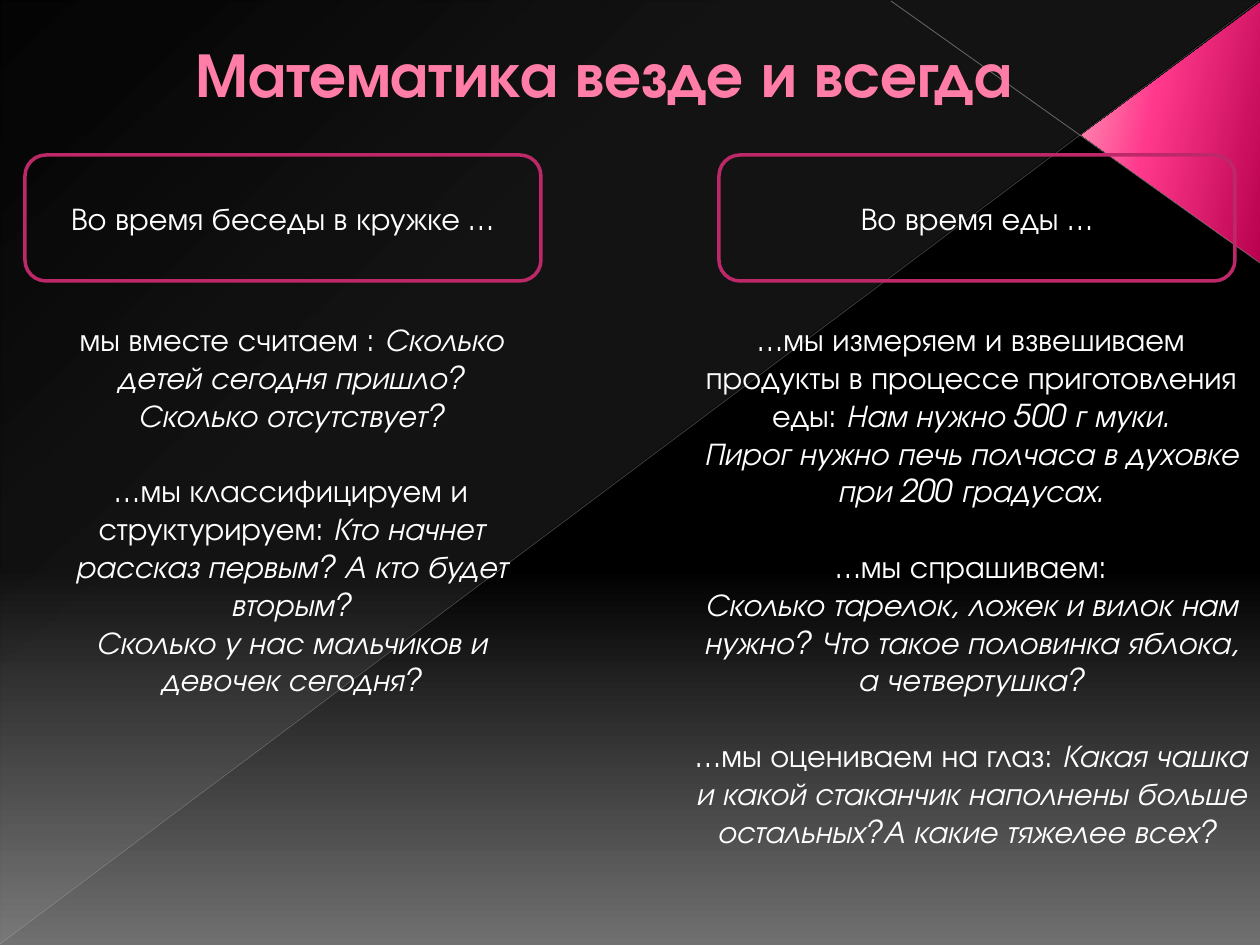
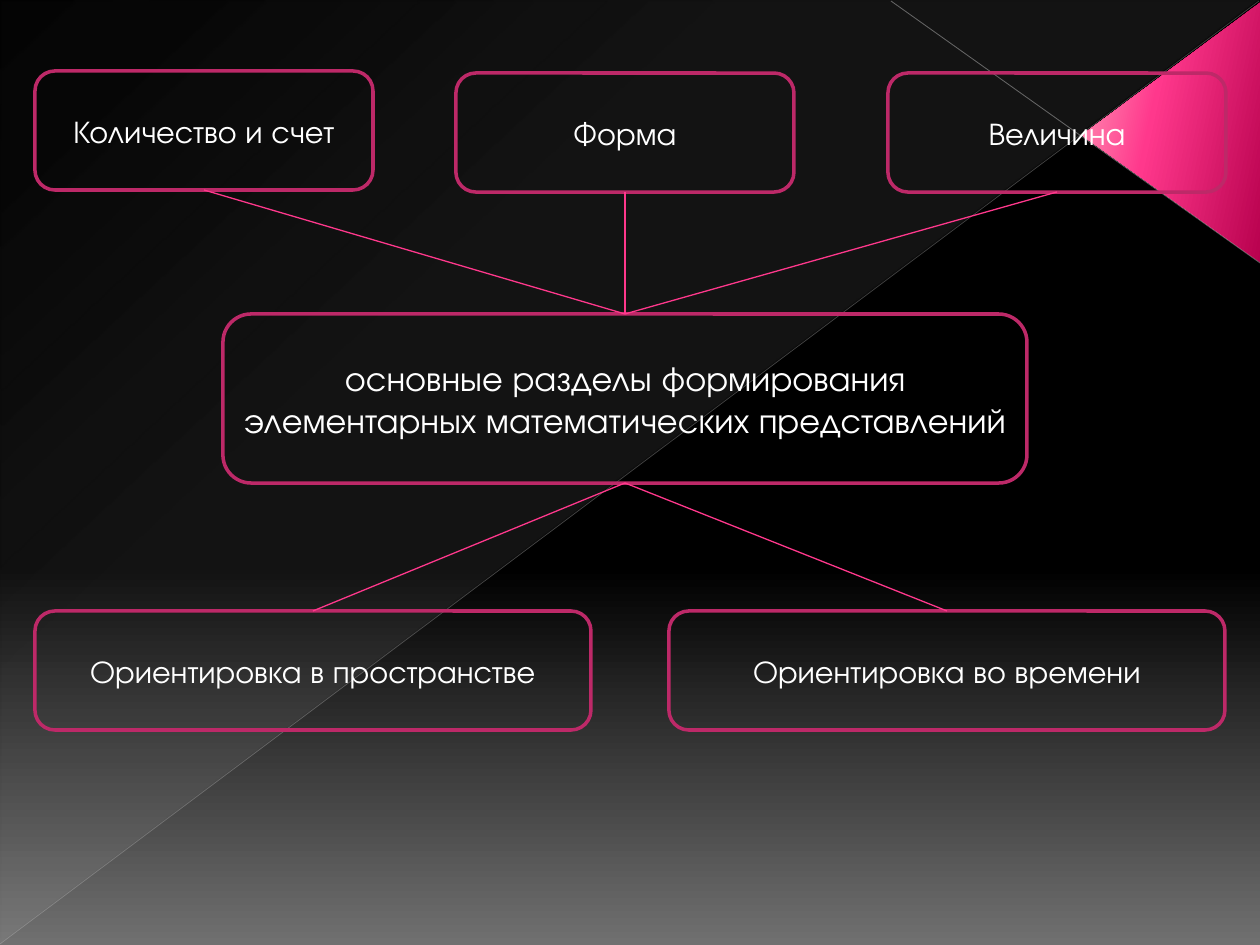
"""Build two slides on early mathematics: everyday situations and the main topics."""
from dataclasses import dataclass

from lxml import etree
from pptx import Presentation
from pptx.dml.color import RGBColor
from pptx.enum.shapes import MSO_CONNECTOR, MSO_SHAPE
from pptx.enum.text import MSO_ANCHOR, PP_ALIGN
from pptx.oxml import parse_xml
from pptx.oxml.ns import nsdecls, qn
from pptx.util import Emu, Pt

STRAIGHT = MSO_CONNECTOR.STRAIGHT
ROUNDED = MSO_SHAPE.ROUNDED_RECTANGLE
RIGHT_TRIANGLE = MSO_SHAPE.RIGHT_TRIANGLE
TRIANGLE = MSO_SHAPE.ISOSCELES_TRIANGLE
MIDDLE = MSO_ANCHOR.MIDDLE
CENTER = PP_ALIGN.CENTER

PX_PER_INCH = 126
FONT = "TeX Gyre Adventor"
COLORS = {
    "text": "FFFFFF",
    "title": "FF7DA7",
    "title_edge": "B12761",
    "frame": "BD2968",
    "link": "FF388C",
    "long_ray": "BFBFBF",
    "short_ray": "C6C6C6",
    "sheen": "D2D2D2",
    "black": "000000",
    "gray": "707070",
    "deep_pink": "B8014E",
    "pale_pink": "FF9CB9",
}
TOP, BOTTOM = 0, 2
TITLE_ONLY, BLANK = 5, 6


@dataclass(frozen=True)
class Area:
    left: int
    top: int
    width: int
    height: int


@dataclass(frozen=True)
class Stop:
    place: int
    color: str
    alpha: int = 100


@dataclass(frozen=True)
class Ray:
    start: tuple
    end: tuple
    color: str
    points: float
    alpha: int


@dataclass(frozen=True)
class Passage:
    plain: str
    spoken: str
    gap: bool = False
    breaks: bool = False


@dataclass(frozen=True)
class Situation:
    heading: str
    heading_left: int
    text_area: Area
    passages: tuple


@dataclass(frozen=True)
class Topic:
    label: str
    area: Area
    side: int


BACKDROP = (Stop(0, "black"), Stop(60, "black"), Stop(100, "gray"))
SHEEN = (Stop(0, "sheen", 10), Stop(70, "sheen", 8), Stop(100, "sheen", 1))
PINK = (Stop(0, "deep_pink"), Stop(60, "link"), Stop(100, "pale_pink"))
RAYS = (
    Ray((1260, 263), (891, 1), "short_ray", 0.47, 45),
    Ray((0, 944), (1259, 1), "long_ray", 0.39, 35),
)

SITUATIONS = (
    Situation("Во время беседы в кружке …", 25, Area(42, 314, 499, 432), (
        Passage("мы вместе считаем : ",
                "Сколько детей сегодня пришло? Сколько отсутствует?"),
        Passage("…мы классифицируем и структурируем: ",
                "Кто начнет рассказ первым? А кто будет вторым?", gap=True),
        Passage("", "Сколько у нас мальчиков и девочек сегодня?"),
    )),
    Situation("Во время еды …", 719, Area(683, 314, 577, 631), (
        Passage("…мы измеряем и взвешиваем продукты в процессе приготовления еды: ",
                "Нам нужно 500 г муки."),
        Passage("", "Пирог нужно печь полчаса в духовке при 200 градусах."),
        Passage("…мы спрашиваем:",
                "Сколько тарелок, ложек и вилок нам нужно? "
                "Что такое половинка яблока, а четвертушка?", gap=True, breaks=True),
        Passage("…мы оцениваем на глаз: ",
                "Какая чашка и какой стаканчик наполнены больше остальных?"
                "А какие тяжелее всех? ", gap=True),
    )),
)

CORE_LABEL = "основные разделы формирования элементарных математических представлений "
CORE_AREA = Area(223, 314, 804, 169)
TOPICS = (
    Topic("Количество и счет", Area(35, 71, 338, 119), TOP),
    Topic("Форма", Area(456, 73, 338, 119), TOP),
    Topic("Величина", Area(888, 73, 338, 119), TOP),
    Topic("Ориентировка в пространстве", Area(35, 611, 556, 119), BOTTOM),
    Topic("Ориентировка во времени", Area(669, 611, 556, 119), BOTTOM),
)


def px(count: int) -> Emu:
    """Turn pixels into EMU."""
    return Emu(round(count * 914400 / PX_PER_INCH))


def bounds(area: Area) -> tuple:
    """Give an area's four lengths in EMU."""
    return px(area.left), px(area.top), px(area.width), px(area.height)


def rgb(name: str) -> RGBColor:
    """Look up a named colour."""
    return RGBColor.from_string(COLORS[name])


def paint_gradient(fill, properties, stops: tuple, angle: int) -> None:
    """Fill a shape or background with a linear gradient."""
    fill.solid()
    marks = "".join(
        f'<a:gs pos="{stop.place * 1000}"><a:srgbClr val="{COLORS[stop.color]}">'
        f'<a:alpha val="{stop.alpha * 1000}"/></a:srgbClr></a:gs>'
        for stop in stops
    )
    gradient = parse_xml(
        f'<a:gradFill {nsdecls("a")} rotWithShape="1"><a:gsLst>{marks}</a:gsLst>'
        f'<a:lin ang="{angle * 60000}" scaled="0"/></a:gradFill>'
    )
    properties.replace(properties.find(qn("a:solidFill")), gradient)


def style_span(span, size: float, color: str = "text") -> None:
    """Set the font of one run."""
    span.font.name = FONT
    span.font.size = Pt(size)
    span.font.color.rgb = rgb(color)


def add_line(page, start: tuple, end: tuple, color: str, points: float):
    """Draw a straight line without a shadow."""
    line = page.shapes.add_connector(STRAIGHT, *map(px, start + end))
    line.line.color.rgb = rgb(color)
    line.line.width = Pt(points)
    etree.SubElement(line.element.spPr, qn("a:effectLst"))
    return line


def add_flipped(page, kind, area: Area, stops: tuple, angle: int):
    """Draw a vertically flipped gradient shape without an outline."""
    shape = page.shapes.add_shape(kind, *bounds(area))
    shape.shadow.inherit = False
    shape.line.fill.background()
    shape.element.spPr.find(qn("a:xfrm")).set("flipV", "1")
    paint_gradient(shape.fill, shape.element.spPr, stops, angle)
    return shape


def decorate(page) -> None:
    """Draw the shared backdrop, triangles and rays."""
    fill = page.background.fill
    fill.solid()
    paint_gradient(fill, next(page.element.iter(qn("p:bgPr"))), BACKDROP, 90)
    add_flipped(page, RIGHT_TRIANGLE, Area(1, 1, 1258, 943), SHEEN, 133)
    corner = add_flipped(page, TRIANGLE, Area(1041, 43, 261, 179), PINK, 258)
    corner.adjustments[0] = 0.51
    corner.rotation = 90
    for ray in RAYS:
        line = add_line(page, ray.start, ray.end, ray.color, ray.points)
        color = next(line.element.spPr.iter(qn("a:srgbClr")))
        etree.SubElement(color, qn("a:alpha")).set("val", str(ray.alpha * 1000))


def add_frame(page, label: str, area: Area, size: int = 18):
    """Draw a rounded frame with a centred label."""
    box = page.shapes.add_shape(ROUNDED, *bounds(area))
    box.shadow.inherit = False
    box.fill.background()
    box.line.color.rgb = rgb("frame")
    box.line.width = Pt(2)
    box.text_frame.text = label
    box.text_frame.vertical_anchor = MIDDLE
    para = box.text_frame.paragraphs[0]
    para.alignment = CENTER
    style_span(para.runs[0], size)
    return box


def add_title(page, text: str) -> None:
    """Place the outlined title above the decoration."""
    title = page.shapes.title
    title.left, title.top, title.width, title.height = bounds(Area(105, 0, 998, 145))
    title.element.getparent().append(title.element)
    title.text_frame.text = text
    title.text_frame.vertical_anchor = MIDDLE
    para = title.text_frame.paragraphs[0]
    para.alignment = CENTER
    span = para.runs[0]
    style_span(span, 36, "title")
    span.font.bold = True
    edge = parse_xml(
        f'<a:ln {nsdecls("a")} w="6350"><a:solidFill>'
        f'<a:srgbClr val="{COLORS["title_edge"]}"/></a:solidFill></a:ln>'
    )
    span.font.fill.solid()
    span.font.color.rgb = rgb("title")
    next(para.runs[0]._r.iter(qn("a:rPr"))).insert(0, edge)


def add_passages(page, situation: Situation) -> None:
    """Write the passages with the spoken words in italics."""
    box = page.shapes.add_textbox(*bounds(situation.text_area))
    frame = box.text_frame
    frame.word_wrap = True
    for index, passage in enumerate(situation.passages):
        para = frame.add_paragraph() if index else frame.paragraphs[0]
        para.alignment = CENTER
        para.space_before = Pt(21.6 if passage.gap else 0)
        if passage.plain:
            span = para.add_run()
            span.text = passage.plain
            style_span(span, 18)
        if passage.breaks:
            para.add_line_break()
        span = para.add_run()
        span.text = passage.spoken
        style_span(span, 18)
        span.font.italic = True


def build_situations(deck) -> None:
    """Build the slide of everyday situations."""
    page = deck.slides.add_slide(deck.slide_layouts[TITLE_ONLY])
    decorate(page)
    add_title(page, "Математика везде и всегда")
    for situation in SITUATIONS:
        add_frame(page, situation.heading, Area(situation.heading_left, 155, 516, 126))
    for situation in SITUATIONS:
        add_passages(page, situation)


def build_topics(deck) -> None:
    """Build the diagram of the main topics."""
    page = deck.slides.add_slide(deck.slide_layouts[BLANK])
    decorate(page)
    core = add_frame(page, CORE_LABEL, CORE_AREA, 20)
    boxes = [add_frame(page, topic.label, topic.area) for topic in TOPICS]
    for topic, box in zip(TOPICS, boxes):
        link = add_line(page, (0, 0), (0, 0), "link", 0.75)
        link.begin_connect(core, topic.side)
        link.end_connect(box, BOTTOM - topic.side)


def main() -> None:
    """Build and save the deck."""
    deck = Presentation()
    deck.slide_width, deck.slide_height = px(1260), px(945)
    build_situations(deck)
    build_topics(deck)
    deck.save("out.pptx")


if __name__ == "__main__":
    main()
